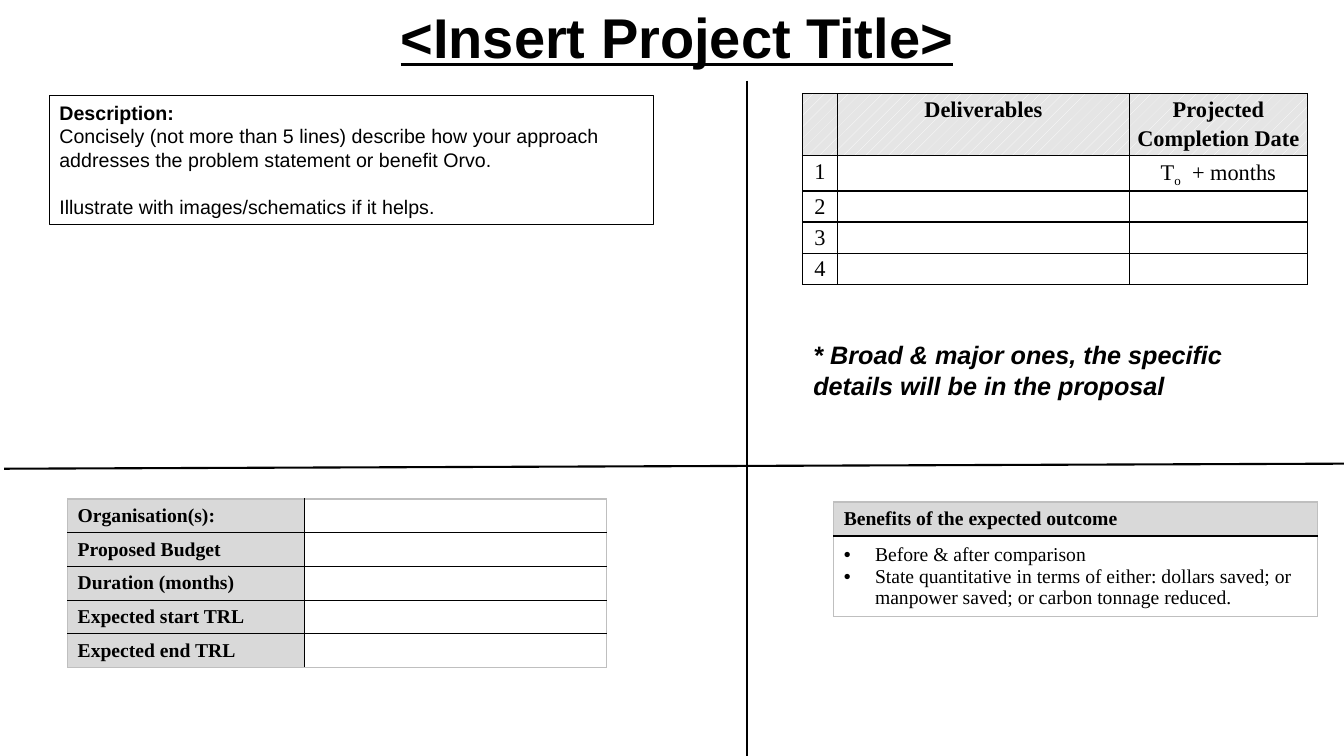
from collections import namedtuple

from lxml import etree
from pptx import Presentation
from pptx.dml.color import RGBColor
from pptx.enum.dml import MSO_PATTERN
from pptx.enum.shapes import MSO_CONNECTOR, MSO_SHAPE
from pptx.enum.text import MSO_ANCHOR, PP_ALIGN
from pptx.oxml.ns import qn
from pptx.util import Inches, Pt

BLACK = RGBColor(0x00, 0x00, 0x00)
WHITE = RGBColor(0xFF, 0xFF, 0xFF)
LABEL_GREY = RGBColor(0xD9, 0xD9, 0xD9)
HATCH_GREY = RGBColor(0xE5, 0xE5, 0xE5)
EDGE_GREY = RGBColor(0xBF, 0xBF, 0xBF)

CENTER, LEFT = PP_ALIGN.CENTER, PP_ALIGN.LEFT
TOP, MIDDLE = MSO_ANCHOR.TOP, MSO_ANCHOR.MIDDLE
HATCH = MSO_PATTERN.PERCENT_10
RECTANGLE = MSO_SHAPE.RECTANGLE
STRAIGHT = MSO_CONNECTOR.STRAIGHT

PAGE_WIDTH, PAGE_HEIGHT = Inches(13.33), Inches(7.5)
Box = namedtuple("Box", "left top width height")

TITLE_FONT = {"name": "Arial", "size": Pt(40), "bold": True, "underline": True}
BODY_FONT = {"name": "Arial", "size": Pt(14), "bold": False}
HEAD_FONT = {**BODY_FONT, "bold": True}
NOTE_FONT = {"name": "Arial", "size": Pt(18), "bold": True, "italic": True}
GRID_FONT = {"name": "Times New Roman", "size": Pt(16), "bold": False}
GRID_HEAD_FONT = {**GRID_FONT, "bold": True}
CELL_FONT = {**GRID_FONT, "size": Pt(14)}
LABEL_FONT = {**CELL_FONT, "bold": True}


def across(percent):
    return round(PAGE_WIDTH * percent / 100)


def down(percent):
    return round(PAGE_HEIGHT * percent / 100)


def region(left, top, width, height):
    return Box(across(left), down(top), across(width), down(height))


def set_all(target, values):
    for name, value in values.items():
        setattr(target, name, value)


def add_span(para, text, font):
    span = para.add_run()
    span.text = text
    set_all(span.font, font)
    span.font.color.rgb = BLACK
    return span


def add_border(cell, side, color):
    line = etree.SubElement(cell._tc.get_or_add_tcPr(), qn(f"a:ln{side}"), w=str(Pt(1)))
    fill = etree.SubElement(line, qn("a:solidFill"))
    etree.SubElement(fill, qn("a:srgbClr"), val=str(color))


def add_bullet(para):
    properties = para._p.get_or_add_pPr()
    properties.set("marL", str(Inches(0.31)))
    properties.set("indent", str(-Inches(0.31)))
    etree.SubElement(properties, qn("a:buFont"), typeface="Arial")
    etree.SubElement(properties, qn("a:buChar"), char="•")


def add_grid(page, box, columns, rows, edge, margin, anchor):
    last_row, last_column = len(rows) - 1, len(columns) - 1
    table = page.shapes.add_table(len(rows), len(columns), *box).table
    set_all(table, {"first_row": False, "horz_banding": False})
    for column, share in zip(table.columns, columns):
        column.width = round(box.width * share / sum(columns))
    for row, share in zip(table.rows, rows):
        row.height = round(box.height * share / sum(rows))
    for r in range(len(rows)):
        for c in range(len(columns)):
            cell = table.cell(r, c)
            set_all(cell, {"margin_left": margin, "margin_right": margin,
                           "margin_top": 0, "margin_bottom": 0,
                           "vertical_anchor": anchor})
            outer = {"L": c == 0, "R": c == last_column, "T": r == 0, "B": r == last_row}
            for side, is_outer in outer.items():
                add_border(cell, side, edge if is_outer else BLACK)
            cell.fill.background()
    return table


def fill_label(cell, text):
    cell.fill.solid()
    cell.fill.fore_color.rgb = LABEL_GREY
    add_span(cell.text_frame.paragraphs[0], text, LABEL_FONT)


def add_title(page, box):
    title = page.shapes.title
    set_all(title, box._asdict())
    title.fill.solid()
    title.fill.fore_color.rgb = WHITE
    title.text_frame.vertical_anchor = MIDDLE
    para = title.text_frame.paragraphs[0]
    set_all(para, {"alignment": CENTER, "line_spacing": 0.9})
    add_span(para, "<Insert Project Title>", TITLE_FONT)


def add_dividers(page):
    for start_x, start_y, end_x, end_y in ((0.3, 62, 100.3, 61.33),
                                           (55.58, 10.67, 55.58, 102.67)):
        divider = page.shapes.add_connector(
            STRAIGHT, across(start_x), down(start_y), across(end_x), down(end_y))
        divider.line.color.rgb = BLACK
        divider.line.width = Pt(1.5)
        etree.SubElement(divider._element.spPr, qn("a:effectLst"))


def add_description(page, box):
    panel = page.shapes.add_shape(RECTANGLE, *box)
    panel.shadow.inherit = False
    panel.fill.background()
    panel.line.color.rgb = BLACK
    panel.line.width = Pt(0.75)
    frame = panel.text_frame
    set_all(frame, {"word_wrap": True, "vertical_anchor": TOP})
    lines = (
        ("Description:", HEAD_FONT, 0),
        ("Concisely (not more than 5 lines) describe how your approach "
         "addresses the problem statement or benefit Orvo.", BODY_FONT, 0),
        ("Illustrate with images/schematics if it helps.", BODY_FONT, 16.5),
    )
    for index, (text, font, gap) in enumerate(lines):
        para = frame.add_paragraph() if index else frame.paragraphs[0]
        set_all(para, {"alignment": LEFT, "space_before": Pt(gap)})
        add_span(para, text, font)


def add_deliverables(page, box):
    table = add_grid(page, box, (0.35, 2.89, 1.77), (62, 35, 31, 31, 31),
                     BLACK, Inches(0.05), TOP)
    for cell in table.rows[0].cells:
        cell.fill.patterned()
        cell.fill.pattern = HATCH
        cell.fill.fore_color.rgb = WHITE
        cell.fill.back_color.rgb = HATCH_GREY
    entries = [(0, 1, "Deliverables", GRID_HEAD_FONT),
               (0, 2, "Projected Completion Date", GRID_HEAD_FONT),
               (1, 2, "T", GRID_FONT)]
    entries += [(row, 0, str(row), GRID_FONT) for row in range(1, 5)]
    for row, column, text, font in entries:
        para = table.cell(row, column).text_frame.paragraphs[0]
        set_all(para, {"alignment": CENTER, "line_spacing": 1.15})
        add_span(para, text, font)
    date = table.cell(1, 2).text_frame.paragraphs[0]
    subscript = add_span(date, "o", GRID_FONT)
    subscript._r.get_or_add_rPr().set("baseline", "-25000")
    add_span(date, "  + months", GRID_FONT)


def add_note(page, box):
    frame = page.shapes.add_textbox(*box).text_frame
    frame.word_wrap = True
    add_span(frame.paragraphs[0],
             "* Broad & major ones, the specific details will be in the proposal", NOTE_FONT)


def add_project_facts(page, box):
    labels = ("Organisation(s):", "Proposed Budget", "Duration (months)",
              "Expected start TRL", "Expected end TRL")
    table = add_grid(page, box, (2.35, 3), (1,) * len(labels),
                     EDGE_GREY, Inches(0.1), MIDDLE)
    for row, label in enumerate(labels):
        fill_label(table.cell(row, 0), label)


def add_benefits(page, box):
    table = add_grid(page, box, (1,), (34, 81), EDGE_GREY, Inches(0.1), MIDDLE)
    fill_label(table.cell(0, 0), "Benefits of the expected outcome")
    frame = table.cell(1, 0).text_frame
    benefits = ("Before & after comparison",
                "State quantitative in terms of either: dollars saved; or "
                "manpower saved; or carbon tonnage reduced.")
    for index, benefit in enumerate(benefits):
        para = frame.add_paragraph() if index else frame.paragraphs[0]
        add_bullet(para)
        add_span(para, benefit, CELL_FONT)


def main():
    deck = Presentation()
    set_all(deck, {"slide_width": PAGE_WIDTH, "slide_height": PAGE_HEIGHT})
    page = deck.slides.add_slide(deck.slide_layouts[5])
    add_title(page, region(13.35, 0.13, 74.03, 10.53))
    add_dividers(page)
    add_description(page, region(3.68, 12.67, 44.93, 17.07))
    add_deliverables(page, region(59.7, 12.4, 37.6, 25.2))
    add_project_facts(page, region(5.03, 66, 40.1, 22.33))
    add_benefits(page, region(62.03, 66.4, 36, 15.2))
    add_note(page, region(59.78, 44.27, 38.25, 9.47))
    deck.save("out.pptx")


if __name__ == "__main__":
    main()
